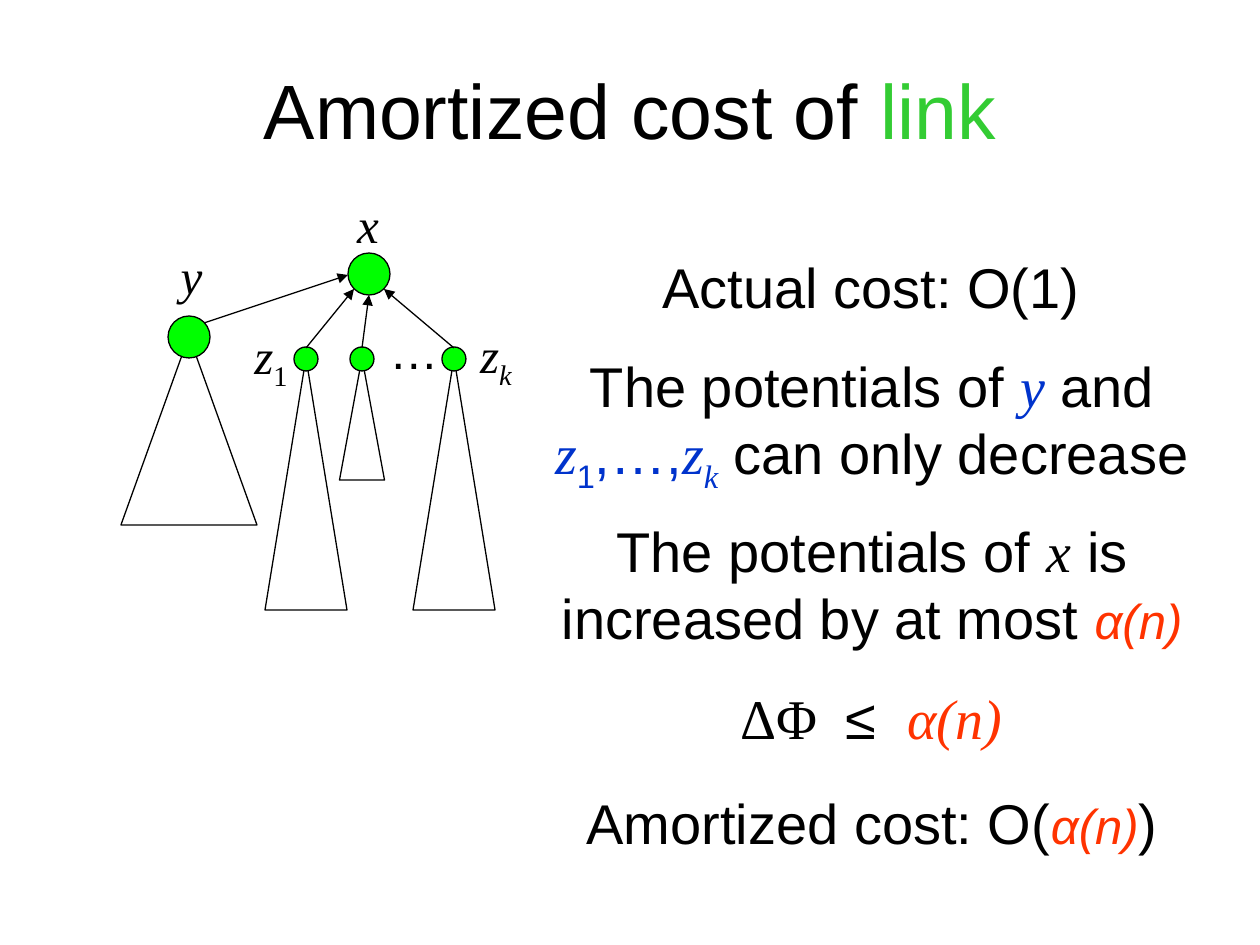
from lxml.etree import SubElement
from pptx import Presentation
from pptx.dml.color import RGBColor
from pptx.enum.shapes import MSO_CONNECTOR, MSO_SHAPE
from pptx.enum.text import MSO_ANCHOR, MSO_AUTO_SIZE, PP_ALIGN
from pptx.oxml.ns import qn
from pptx.util import Emu, Inches, Pt

PX_PER_INCH = 126
BLACK = RGBColor(0x00, 0x00, 0x00)
NODE_GREEN = RGBColor(0x00, 0xFF, 0x00)
LINK_GREEN = RGBColor(0x33, 0xCC, 0x33)
BLUE = RGBColor(0x00, 0x33, 0xCC)
RED = RGBColor(0xFF, 0x33, 0x00)
SANS = "Arial"
SERIF = "Times New Roman"
OUTLINE = Pt(0.75)

VARIABLE = {"font": SERIF, "italic": True}
BLUE_VARIABLE = {**VARIABLE, "color": BLUE}
ALPHA = ("α(n)", {"size": 28, "color": RED, "italic": True})


def px(*lengths):
    return [Emu(round(Inches(length) / PX_PER_INCH)) for length in lengths]


def add_run(paragraph, text, font=SANS, size=32, color=BLACK, italic=False,
            subscript=False):
    run = paragraph.add_run()
    run.text = text
    run.font.name = font
    run.font.size = Pt(size)
    run.font.italic = italic
    run.font.color.rgb = color
    if subscript:
        run._r.get_or_add_rPr().set("baseline", "-25000")


def write_line(frame, parts, **base):
    """Write centred (text, format) parts, each format overriding base."""
    frame.word_wrap = True
    paragraph = frame.paragraphs[0]
    paragraph.alignment = PP_ALIGN.CENTER
    for text, style in parts:
        add_run(paragraph, text, **{**base, **style})


def add_text(slide, box, parts, **base):
    frame = slide.shapes.add_textbox(*px(*box)).text_frame
    write_line(frame, parts, **base)
    frame.auto_size = MSO_AUTO_SIZE.SHAPE_TO_FIT_TEXT


def add_outlined(slide, preset, box, fill=None):
    shape = slide.shapes.add_shape(preset, *px(*box))
    shape.shadow.inherit = False
    shape.line.color.rgb = BLACK
    shape.line.width = OUTLINE
    if fill is None:
        shape.fill.background()
    else:
        shape.fill.solid()
        shape.fill.fore_color.rgb = fill


def add_subtree(slide, center, width, height):
    x, y = center
    add_outlined(slide, MSO_SHAPE.ISOSCELES_TRIANGLE,
                 (x - width / 2, y - 1, width, height))


def add_node(slide, center, diameter):
    x, y = center
    add_outlined(slide, MSO_SHAPE.OVAL,
                 (x - diameter / 2, y - diameter / 2, diameter, diameter),
                 NODE_GREEN)


def add_arrow(slide, start, end):
    arrow = slide.shapes.add_connector(MSO_CONNECTOR.STRAIGHT,
                                       *px(*start, *end))
    arrow.line.color.rgb = BLACK
    arrow.line.width = OUTLINE
    SubElement(arrow.line._get_or_add_ln(), qn("a:tailEnd"), type="triangle")
    SubElement(arrow._element.spPr, qn("a:effectLst"))


def add_title(slide):
    title = slide.shapes.title
    title.left, title.top, title.width, title.height = px(0, 30, 1260, 158)
    title.text_frame.vertical_anchor = MSO_ANCHOR.MIDDLE
    write_line(title.text_frame,
               [("Amortized cost of ", {}), ("link", {"color": LINK_GREEN})],
               size=44)


def add_tree(slide):
    root = (369, 274)
    # center, diameter, subtree width and height, arrow start and end
    children = [
        ((189, 337), 42, 136, 189, (204, 323), (348, 275)),
        ((306, 359), 24, 82, 252, (306, 348), (354, 289)),
        ((362, 359), 24, 45, 122, (362, 348), (369, 295)),
        ((454, 359), 24, 82, 252, (454, 348), (384, 289)),
    ]
    for center, _, width, height, _, _ in children:
        add_subtree(slide, center, width, height)
    add_node(slide, root, 42)
    for center, diameter, _, _, start, end in children:
        add_node(slide, center, diameter)
        add_arrow(slide, start, end)

    labels = [
        ((160, 239, 63, 72), [("y", VARIABLE)]),
        ((334, 188, 68, 72), [("x", VARIABLE)]),
        ((237, 319, 68, 72), [("z", VARIABLE),
                              ("1", {"font": SERIF, "subscript": True})]),
        ((377, 314, 68, 72), [("…", {})]),
        ((462, 318, 68, 72), [("z", VARIABLE),
                              ("k", {**VARIABLE, "subscript": True})]),
    ]
    for box, parts in labels:
        add_text(slide, box, parts, size=28)


def add_analysis(slide):
    statements = [
        ((532, 246, 679, 79), [("Actual cost: O(1)", {})]),
        ((515, 345, 714, 147), [
            ("The potentials of ", {}),
            ("y", BLUE_VARIABLE),
            (" and ", {}),
            ("z", BLUE_VARIABLE),
            ("1", {"color": BLUE, "subscript": True}),
            (",…,", {"color": BLUE}),
            ("z", BLUE_VARIABLE),
            ("k", {**BLUE_VARIABLE, "subscript": True}),
            (" can only decrease", {}),
        ]),
        ((515, 510, 714, 147), [
            ("The potentials of ", {}),
            ("x", VARIABLE),
            (" is increased by at most ", {}),
            ALPHA,
        ]),
        ((689, 677, 364, 79), [
            ("ΔΦ  ", {"font": SERIF}),
            ("≤  ", {}),
            ("α(n)", {**VARIABLE, "color": RED}),
        ]),
        ((553, 782, 638, 79), [("Amortized cost: O(", {}), ALPHA, (")", {})]),
    ]
    for box, parts in statements:
        add_text(slide, box, parts)


def main():
    presentation = Presentation()
    presentation.slide_width, presentation.slide_height = px(1260, 945)
    slide = presentation.slides.add_slide(presentation.slide_layouts[5])
    add_title(slide)
    add_tree(slide)
    add_analysis(slide)
    presentation.save("out.pptx")


if __name__ == "__main__":
    main()
